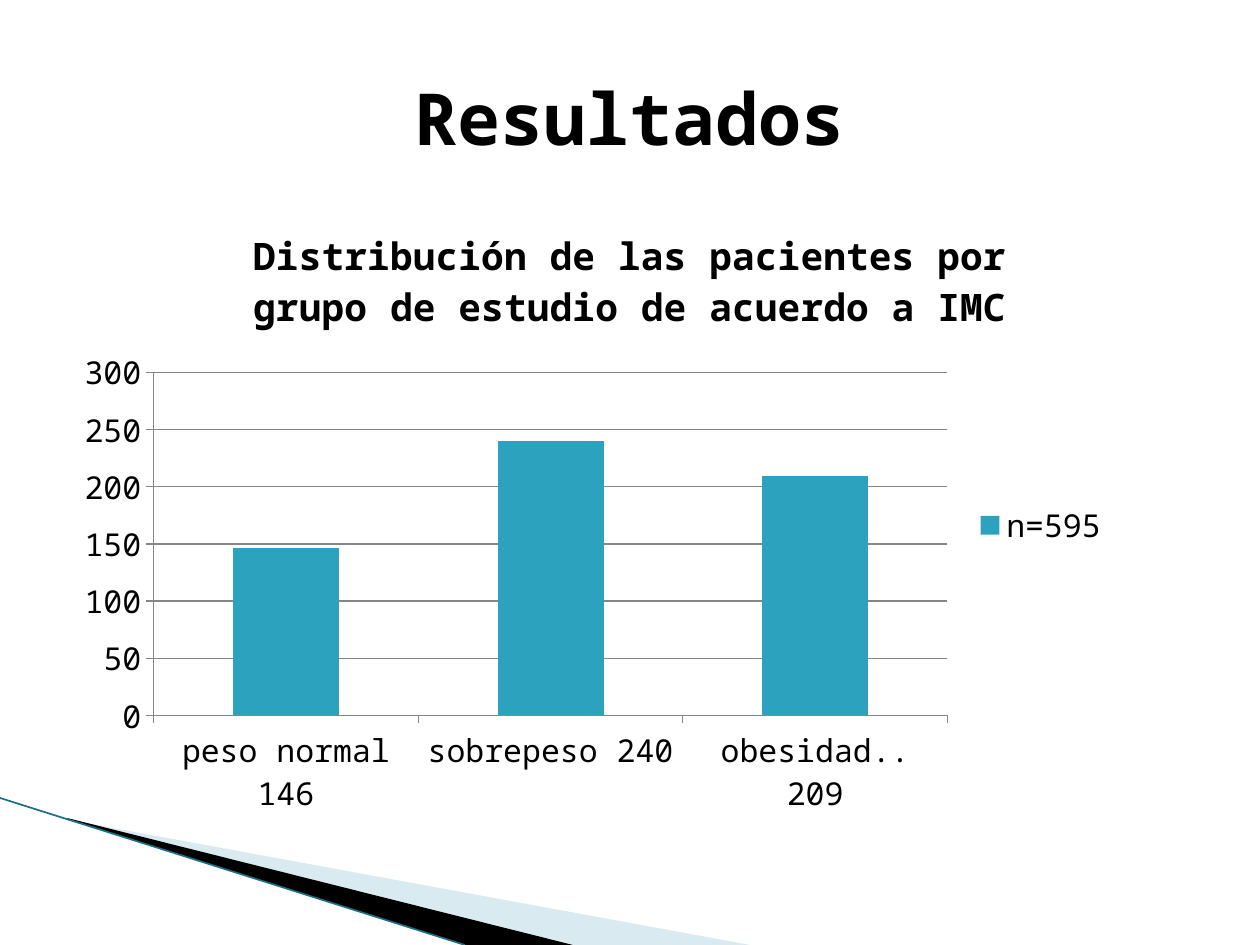
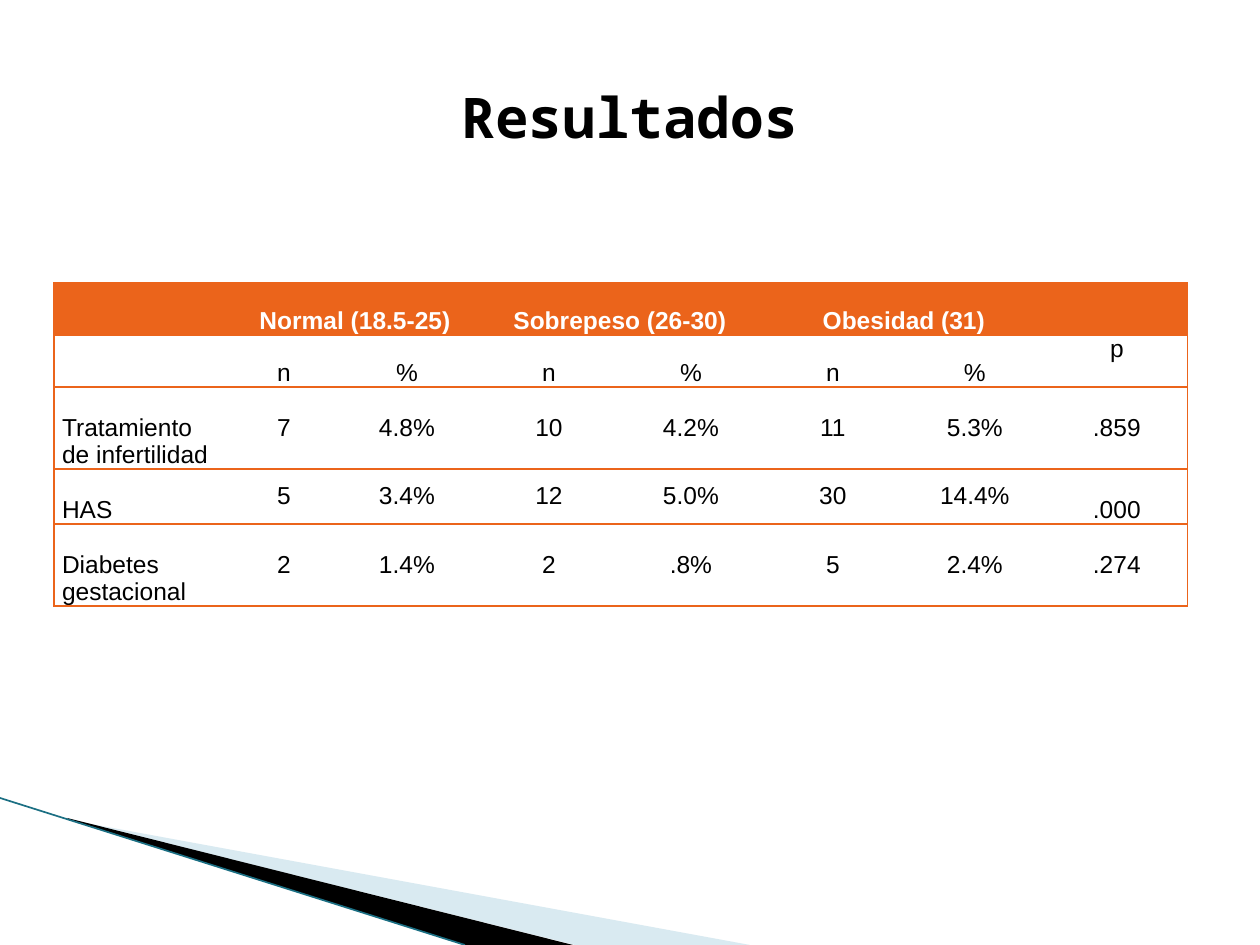
from dataclasses import dataclass

from lxml.etree import SubElement
from pptx import Presentation
from pptx.chart.data import CategoryChartData
from pptx.dml.color import RGBColor
from pptx.enum.chart import XL_CHART_TYPE as Chart, XL_LEGEND_POSITION as Legend, XL_TICK_MARK as Tick
from pptx.enum.shapes import MSO_CONNECTOR as Connector
from pptx.enum.text import MSO_ANCHOR as Anchor, PP_ALIGN as Align
from pptx.oxml import parse_xml
from pptx.oxml.ns import nsdecls, qn
from pptx.util import Pt

PX = 914400 / 126


@dataclass(frozen=True)
class Theme:
    """Colours, fonts and type sizes of the deck."""
    ink: str = "000000"
    paper: str = "FFFFFF"
    bar: str = "2DA2BF"
    grid: str = "868686"
    mist: str = "A0CBDC"
    edge: str = "1B6F83"
    table: str = "EB641B"
    mono: str = "Noto Sans Mono"
    sans: str = "Arial"
    chart_title_size: float = 21.6
    chart_size: int = 18
    table_size: int = 14


T = Theme()
TITLE_BOX = (63, 38, 1134, 157)
BAND_BOX = (0, 798, 750, 147)
CHART_BOX = (63, 204, 1134, 624)
TABLE_BOX = (54, 283, 1134, 323)

MEASURES = ("n", "%") * 3
GROUPS = ("Normal (18.5-25)", "Sobrepeso (26-30)", "Obesidad (31)")
ROWS = (
    ("Tratamiento de infertilidad", "7", "4.8%", "10", "4.2%", "11", "5.3%", ".859"),
    ("HAS", "5", "3.4%", "12", "5.0%", "30", "14.4%", ".000"),
    ("Diabetes gestacional", "2", "1.4%", "2", ".8%", "5", "2.4%", ".274"),
)


def px(*values):
    """Turn px lengths into EMU."""
    return [round(v * PX) for v in values]


def rgb(colour):
    """Make a colour from its hex code."""
    return RGBColor.from_string(colour)


def style(font, name, size, colour=T.ink, bold=False):
    """Set the face, size, colour and weight of a font."""
    font.name, font.size, font.bold = name, Pt(size), bold
    font.color.rgb = rgb(colour)


def add_run(p, text, *font):
    """Add one styled run to a paragraph."""
    r = p.add_run()
    r.text = text
    style(r.font, *font)


def add_title(s, box, text, size):
    """Add the centred slide title."""
    tf = s.shapes.add_textbox(*px(*box)).text_frame
    tf.word_wrap, tf.vertical_anchor = True, Anchor.MIDDLE
    p = tf.paragraphs[0]
    p.alignment = Align.CENTER
    add_run(p, text, T.mono, size, T.ink, True)


def add_wedge(s, points, colour, alpha=None):
    """Add a filled outline, optionally see-through."""
    builder = s.shapes.build_freeform(*points[0], scale=PX)
    builder.add_line_segments(points[1:])
    sp = builder.convert_to_shape()
    sp.shadow.inherit = False
    sp.fill.solid()
    sp.fill.fore_color.rgb = rgb(colour)
    sp.line.fill.background()
    if alpha:
        clr = sp._element.spPr.find(qn("a:solidFill"))[0]
        SubElement(clr, qn("a:alpha"), val=str(alpha * 1000))


def add_band(s, box):
    """Add the slanted corner band."""
    x, y, w, h = box
    bottom = y + h
    add_wedge(s, [(x + 69, y + 22), (x + w, bottom), (x + 575, bottom), (x + 69, y + 21)], T.mist, 40)
    add_wedge(s, [(x + 67, y + 20), (x + 573, bottom), (x + 465, bottom), (x + 68, y + 21)], T.ink)
    line = s.shapes.add_connector(Connector.STRAIGHT, *px(x, y, x + 465, bottom))
    line.line.width = Pt(0.95)
    line.line.color.rgb = rgb(T.edge)
    SubElement(line._element.spPr, qn("a:effectLst"))


def place(element, before, **fractions):
    """Give a chart part a manual layout in fractions of the chart."""
    for old in element.findall(qn("c:layout")):
        element.remove(old)
    inner = '<c:layoutTarget val="inner"/>' if "w" in fractions else ""
    modes = "".join(f'<c:{k}Mode val="edge"/>' for k in "xy")
    sizes = "".join(f'<c:{k} val="{v}"/>' for k, v in fractions.items())
    layout = parse_xml(f'<c:layout {nsdecls("c")}><c:manualLayout>{inner}{modes}{sizes}'
                       '</c:manualLayout></c:layout>')
    element.find(qn(before)).addprevious(layout)


def add_bmi_chart(s, box):
    """Add the column chart of patients by BMI group."""
    data = CategoryChartData()
    data.categories = ["peso normal 146", "sobrepeso 240", "obesidad.. 209"]
    data.add_series("n=595", (146, 240, 209))
    chart = s.shapes.add_chart(Chart.COLUMN_CLUSTERED, *px(*box), data).chart
    style(chart.font, T.mono, T.chart_size)

    tf = chart.chart_title.text_frame
    chart.chart_title.include_in_layout = False
    lines = ("Distribución de las pacientes por", "grupo de estudio de acuerdo a IMC")
    for i, text in enumerate(lines):
        p = tf.add_paragraph() if i else tf.paragraphs[0]
        add_run(p, text, T.mono, T.chart_title_size, T.ink, True)

    plot = chart.plots[0]
    plot.gap_width, plot.vary_by_categories = 150, False
    bars = plot.series[0].format.fill
    bars.solid()
    bars.fore_color.rgb = rgb(T.bar)

    values = chart.value_axis
    values.minimum_scale, values.maximum_scale, values.major_unit = 0, 300, 50
    values.has_major_gridlines = True
    for axis in (chart.category_axis, values):
        axis.major_tick_mark = Tick.OUTSIDE
        axis.format.line.color.rgb = rgb(T.grid)
    values.major_gridlines.format.line.color.rgb = rgb(T.grid)

    chart.has_legend = True
    chart.legend.position, chart.legend.include_in_layout = Legend.RIGHT, False
    place(chart.legend._element, "c:overlay", x=0.8, y=0.47)
    area = chart._chartSpace.chart.plotArea
    place(area, "c:barChart", x=0.08, y=0.27, w=0.7, h=0.55)


def set_borders(cell, edges):
    """Draw the named cell edges and clear the others."""
    tc_pr = cell._tc.get_or_add_tcPr()
    for edge in "LRTB":
        ln = SubElement(tc_pr, qn(f"a:ln{edge}"), w=str(Pt(0.75)))
        if edge in edges:
            fill = SubElement(ln, qn("a:solidFill"))
            SubElement(fill, qn("a:srgbClr"), val=T.table)
        else:
            SubElement(ln, qn("a:noFill"))


def fill_cell(cell, text, anchor, align, header):
    """Set the text, margins and fill of one cell."""
    cell.margin_left = cell.margin_right = px(8)[0]
    cell.margin_top = cell.margin_bottom = 0
    cell.vertical_anchor = anchor
    p = cell.text_frame.paragraphs[0]
    p.alignment = align
    if text:
        add_run(p, text, T.sans, T.table_size, T.paper if header else T.ink, header)
    if header:
        cell.fill.solid()
        cell.fill.fore_color.rgb = rgb(T.table)
    else:
        cell.fill.background()


def cell_anchor(row, col, text):
    """Choose the vertical anchor of a cell."""
    if text == "p":
        return Anchor.TOP
    if row < 2 or col == 0 or text == ".000":
        return Anchor.BOTTOM
    return Anchor.MIDDLE


def add_outcome_table(s, box):
    """Add the table of outcomes by BMI group."""
    header = [""] + [text for group in GROUPS for text in (group, "")] + [""]
    grid = [header, ["", *MEASURES, "p"], *ROWS]
    last = len(header) - 1
    table = s.shapes.add_table(len(grid), len(header), *px(*box)).table
    table.first_row = table.horz_banding = False
    for col, width in zip(table.columns, px(178, 104, *[142] * 6)):
        col.width = width
    for row, height in zip(table.rows, px(52, 52, 82, 55, 82)):
        row.height = height
    for i, texts in enumerate(grid):
        for j, text in enumerate(texts):
            cell = table.cell(i, j)
            set_borders(cell, "TB" + "L" * (j == 0) + "R" * (j == last))
            align = Align.CENTER if j else Align.LEFT
            fill_cell(cell, text, cell_anchor(i, j, text), align, i == 0)
    for j in range(1, last, 2):
        table.cell(0, j).merge(table.cell(0, j + 1))


def add_results_slide(prs, title_size, add_body, body_box):
    """Add a results slide with its band, body and title."""
    s = prs.slides.add_slide(prs.slide_layouts[6])
    add_band(s, BAND_BOX)
    add_body(s, body_box)
    add_title(s, TITLE_BOX, "Resultados", title_size)


def main():
    """Build and save the deck."""
    prs = Presentation()
    prs.slide_width, prs.slide_height = px(1260, 945)
    add_results_slide(prs, 41, add_bmi_chart, CHART_BOX)
    add_results_slide(prs, 32, add_outcome_table, TABLE_BOX)
    prs.save("out.pptx")


if __name__ == "__main__":
    main()
